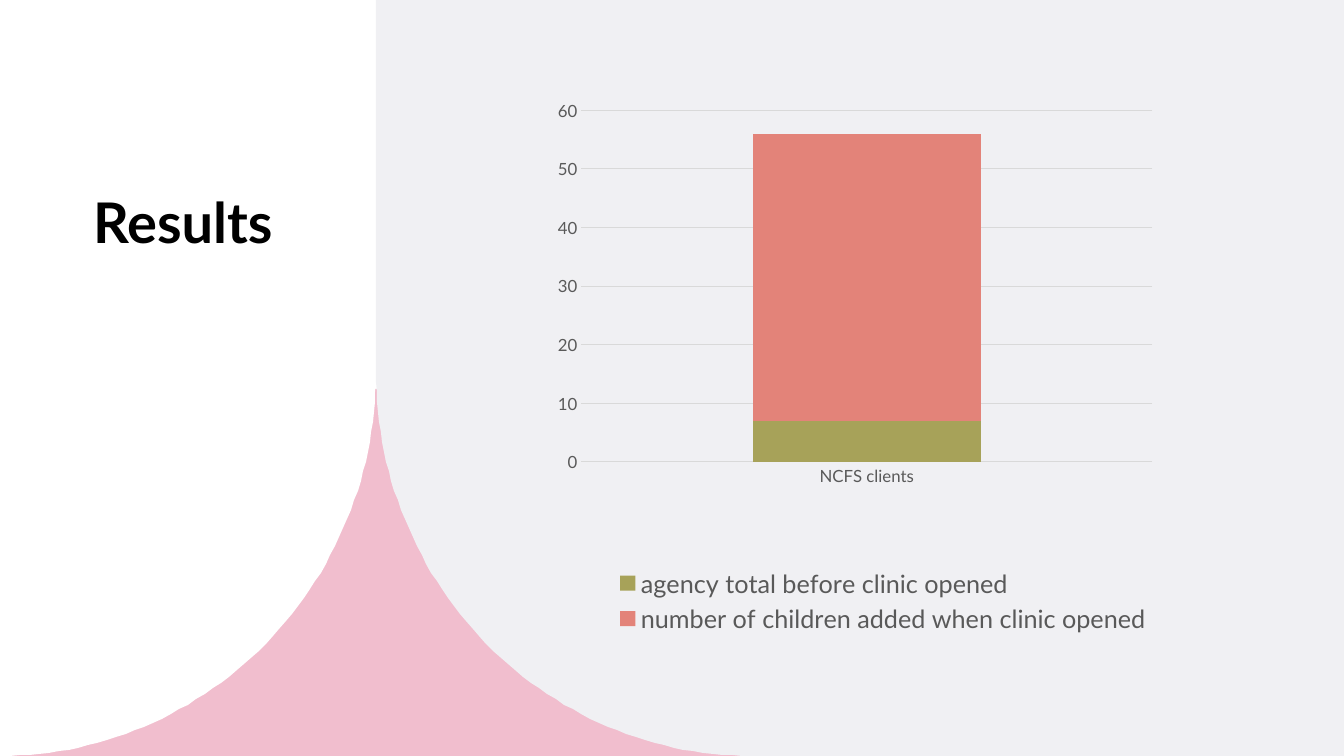
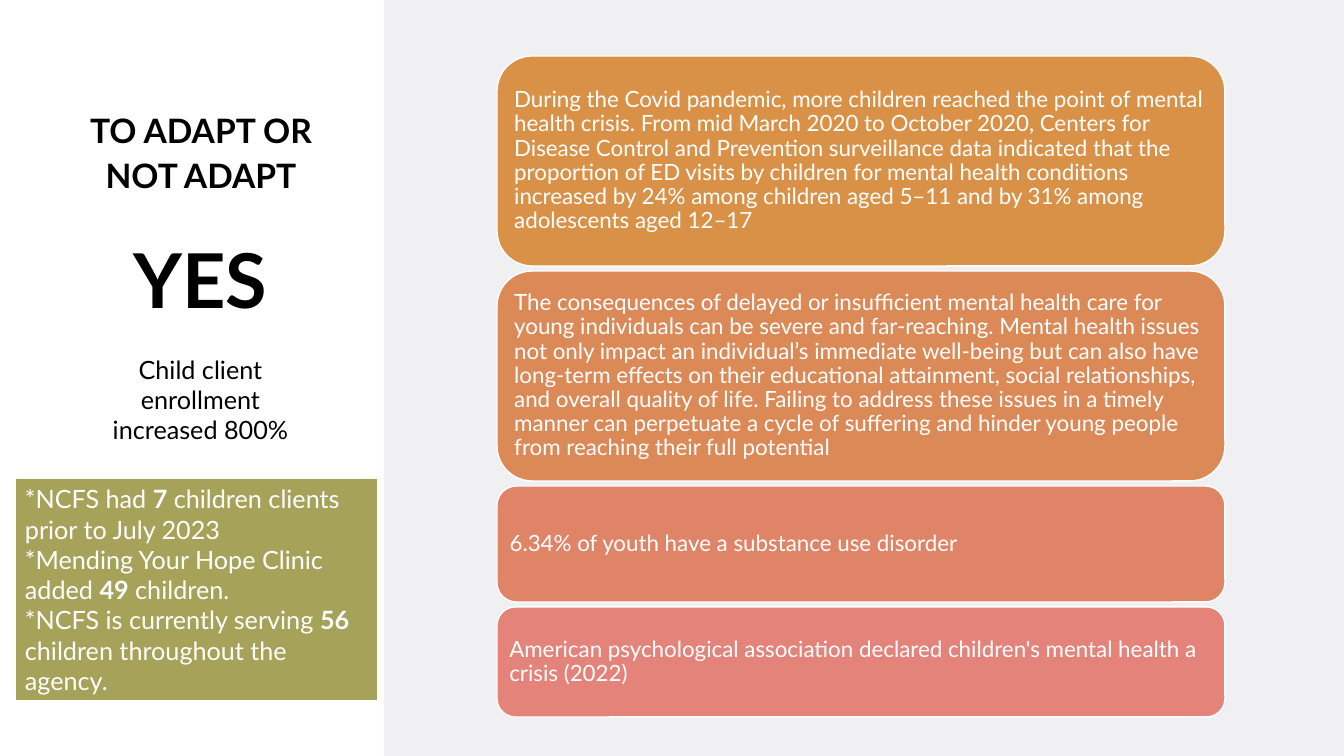
import math
from dataclasses import dataclass

from lxml import etree
from pptx import Presentation
from pptx import util as u
from pptx.chart.data import CategoryChartData
from pptx.dml.color import RGBColor
from pptx.enum import chart as charts, shapes, text
from pptx.oxml.ns import qn

EMU_PER_PX = 914400 / 100.8
SLIDE_WIDTH, SLIDE_HEIGHT = 1344, 756


@dataclass(frozen=True)
class Theme:
    font: str = "Lato"
    white: str = "FFFFFF"
    black: str = "000000"
    panel: str = "F0F0F3"
    pink: str = "F1BECE"
    olive: str = "A7A259"
    coral: str = "E38379"
    axis_text: str = "595959"
    grid: str = "D9D9D9"
    cards: tuple = ("D99147", "DC8958", "E08468", "E38379")
    results_size: int = 40
    question_size: int = 24
    answer_size: int = 54
    body_size: int = 18
    card_size: int = 16
    axis_size: int = 12


THEME = Theme()
LEFT, CENTER = text.PP_ALIGN.LEFT, text.PP_ALIGN.CENTER
TOP, MIDDLE, BOTTOM = (text.MSO_ANCHOR.TOP, text.MSO_ANCHOR.MIDDLE,
                       text.MSO_ANCHOR.BOTTOM)

# Content: boxes are (left, top, width, height) in px
RESULTS_TITLE = "Results"
RESULTS_TITLE_BOX = (83, 176, 265, 275)
CHART_BOX = (541, 86, 684, 553)
CHART_PLOT = {"x": 0.059, "y": 0.044, "w": 0.835, "h": 0.636}
CATEGORIES = ["NCFS clients"]
SERIES = [
    ("agency total before clinic opened", [7], THEME.olive),
    ("number of children added when clinic opened", [49], THEME.coral),
]
CURVE_X, CURVE_TOP = 376, 372
PINK_BAND_TOP = 389

ADAPT_TITLE = "TO ADAPT OR NOT ADAPT"
ADAPT_TITLE_BOX = (73, 54, 256, 146)
ADAPT_PANEL_LEFT = 384
ANSWER, ANSWER_BOX = "YES", (100, 228, 200, 102)
GROWTH = "Child client enrollment increased 800%"
GROWTH_BOX = (82, 349, 237, 102)
COUNTS_BOX = (15, 478, 363, 223)
COUNTS = [
    ("*NCFS had ", "7", " children clients prior to July 2023"),
    ("*Mending Your Hope Clinic added ", "49", " children."),
    ("*NCFS is currently serving ", "56", " children throughout the agency."),
]
CARD_LEFT, CARD_TOP, CARD_WIDTH, CARD_GAP, CARD_MARGIN = 497, 56, 728, 5, 7
CARDS = [
    (210, "During the Covid pandemic, more children reached the point of "
          "mental health crisis. From mid March 2020 to October 2020, Centers "
          "for Disease Control and Prevention surveillance data indicated that "
          "the proportion of ED visits by children for mental health "
          "conditions increased by 24% among children aged 5–11 and by 31% "
          "among adolescents aged 12–17"),
    (210, "The consequences of delayed or insufficient mental health care for "
          "young individuals can be severe and far-reaching. Mental health "
          "issues not only impact an individual’s immediate well-being but can "
          "also have long-term effects on their educational attainment, social "
          "relationships, and overall quality of life. Failing to address "
          "these issues in a timely manner can perpetuate a cycle of suffering "
          "and hinder young people from reaching their full potential"),
    (116, "6.34% of youth have a substance use disorder"),
    (110, "American psychological association declared children's mental "
          "health a crisis (2022)"),
]


# Shared helpers
def px(length):
    return u.Emu(round(length * EMU_PER_PX))


def place(box):
    return [px(length) for length in box]


def style_font(font, size, color, bold=False):
    font.name, font.size, font.bold = THEME.font, u.Pt(size), bold
    font.color.rgb = RGBColor.from_string(color)


def paint(shape, fill, line=None, line_width=1):
    shape.shadow.inherit = False
    shape.fill.solid()
    shape.fill.fore_color.rgb = RGBColor.from_string(fill)
    if line:
        shape.line.color.rgb = RGBColor.from_string(line)
        shape.line.width = u.Pt(line_width)
    else:
        shape.line.fill.background()


def write(shape, paragraphs, size, color, align=LEFT, anchor=TOP,
          spacing=1.0, margin=None):
    """Each paragraph is a list of (words, bold) runs."""
    frame = shape.text_frame
    frame.word_wrap = True
    frame.auto_size = text.MSO_AUTO_SIZE.NONE
    frame.vertical_anchor = anchor
    if margin is not None:
        frame.margin_left = frame.margin_right = px(margin)
        frame.margin_top = frame.margin_bottom = px(margin)
    for index, runs in enumerate(paragraphs):
        paragraph = frame.add_paragraph() if index else frame.paragraphs[0]
        paragraph.alignment, paragraph.line_spacing = align, spacing
        for words, bold in runs:
            run = paragraph.add_run()
            run.text = words
            style_font(run.font, size, color, bold)


def add_block(slide, kind, box, fill, line=None, line_width=1):
    shape = slide.shapes.add_shape(kind, *place(box))
    paint(shape, fill, line, line_width)
    return shape


def add_outline(slide, points, fill):
    builder = slide.shapes.build_freeform(*points[0], scale=EMU_PER_PX)
    builder.add_line_segments(points[1:], close=True)
    paint(builder.convert_to_shape(), fill)


def add_label(slide, box, words, size, bold=False):
    label = slide.shapes.add_textbox(*place(box))
    write(label, [[(words, bold)]], size, THEME.black, CENTER)


def add_titled_slide(presentation, title, box, size, align, anchor):
    slide = presentation.slides.add_slide(presentation.slide_layouts[5])
    shape = slide.shapes.title
    shape.left, shape.top, shape.width, shape.height = place(box)
    write(shape, [[(title, True)]], size, THEME.black, align, anchor, 1.1)
    return slide


def quarter_arc(center_x, direction, steps=60):
    """Points from the side of an ellipse down to its lowest point."""
    height = SLIDE_HEIGHT - CURVE_TOP
    angles = [math.pi / 2 * step / steps for step in range(steps + 1)]
    return [(center_x + direction * CURVE_X * math.cos(angle),
             CURVE_TOP + height * math.sin(angle)) for angle in angles]


# Results slide
def set_plot_layout(chart):
    plot_area = chart._chartSpace.chart.plotArea
    for old in plot_area.findall(qn("c:layout")):
        plot_area.remove(old)
    layout = etree.Element(qn("c:layout"))
    manual = etree.SubElement(layout, qn("c:manualLayout"))
    settings = {"layoutTarget": "inner", "xMode": "edge", "yMode": "edge"}
    for name, value in {**settings, **CHART_PLOT}.items():
        etree.SubElement(manual, qn(f"c:{name}")).set("val", str(value))
    plot_area.insert(0, layout)


def add_clients_chart(slide):
    data = CategoryChartData()
    data.categories = CATEGORIES
    for name, values, _ in SERIES:
        data.add_series(name, values)
    chart = slide.shapes.add_chart(charts.XL_CHART_TYPE.COLUMN_STACKED,
                                   *place(CHART_BOX), data).chart
    chart.has_title = False
    style_font(chart.font, THEME.axis_size, THEME.axis_text)
    chart.has_legend = True
    chart.legend.position = charts.XL_LEGEND_POSITION.BOTTOM
    chart.legend.include_in_layout = False
    style_font(chart.legend.font, THEME.body_size, THEME.axis_text)

    plot = chart.plots[0]
    plot.gap_width, plot.overlap, plot.vary_by_categories = 150, 100, False
    for series, (_, _, color) in zip(plot.series, SERIES):
        series.format.fill.solid()
        series.format.fill.fore_color.rgb = RGBColor.from_string(color)

    value_axis, category_axis = chart.value_axis, chart.category_axis
    for axis in (value_axis, category_axis):
        axis.major_tick_mark = axis.minor_tick_mark = charts.XL_TICK_MARK.NONE
        style_font(axis.tick_labels.font, THEME.axis_size, THEME.axis_text)
    value_axis.minimum_scale, value_axis.maximum_scale = 0, 60
    value_axis.major_unit = 10
    value_axis.format.line.fill.background()
    for line in (value_axis.major_gridlines.format.line,
                 category_axis.format.line):
        line.color.rgb = RGBColor.from_string(THEME.grid)
        line.width = u.Pt(0.75)
    set_plot_layout(chart)


def build_results(presentation):
    slide = add_titled_slide(presentation, RESULTS_TITLE, RESULTS_TITLE_BOX,
                             THEME.results_size, LEFT, TOP)
    # Pink band between two curved panels
    add_block(slide, shapes.MSO_SHAPE.RECTANGLE,
              (0, PINK_BAND_TOP, 2 * CURVE_X, SLIDE_HEIGHT - PINK_BAND_TOP),
              THEME.pink)
    add_outline(slide, [(0, 0), (CURVE_X, 0)] + quarter_arc(0, 1),
                THEME.white)
    add_outline(slide, [(SLIDE_WIDTH, SLIDE_HEIGHT), (SLIDE_WIDTH, 0),
                        (CURVE_X, 0)] + quarter_arc(2 * CURVE_X, -1),
                THEME.panel)
    # Bring the title in front of the white panel
    title = slide.shapes.title.element
    title.getparent().append(title)
    add_clients_chart(slide)


# Adapt slide
def build_adapt(presentation):
    slide = add_titled_slide(presentation, ADAPT_TITLE, ADAPT_TITLE_BOX,
                             THEME.question_size, CENTER, BOTTOM)
    add_block(slide, shapes.MSO_SHAPE.RECTANGLE,
              (ADAPT_PANEL_LEFT, 0, SLIDE_WIDTH - ADAPT_PANEL_LEFT,
               SLIDE_HEIGHT), THEME.panel)
    # Stacked cards
    top = CARD_TOP
    for (height, words), color in zip(CARDS, THEME.cards):
        card = add_block(slide, shapes.MSO_SHAPE.ROUNDED_RECTANGLE,
                         (CARD_LEFT, top, CARD_WIDTH, height), color,
                         THEME.white)
        write(card, [[(words, False)]], THEME.card_size, THEME.white,
              anchor=MIDDLE, spacing=0.9, margin=CARD_MARGIN)
        top += height + CARD_GAP
    # Answer and client counts
    add_label(slide, ANSWER_BOX, ANSWER, THEME.answer_size, True)
    add_label(slide, GROWTH_BOX, GROWTH, THEME.body_size)
    counts = add_block(slide, shapes.MSO_SHAPE.RECTANGLE, COUNTS_BOX,
                       THEME.olive, THEME.white, 1.5)
    write(counts, [[(before, False), (number, True), (after, False)]
                   for before, number, after in COUNTS],
          THEME.body_size, THEME.white, anchor=MIDDLE)


def main():
    presentation = Presentation()
    presentation.slide_width = px(SLIDE_WIDTH)
    presentation.slide_height = px(SLIDE_HEIGHT)
    build_results(presentation)
    build_adapt(presentation)
    presentation.save("out.pptx")


if __name__ == "__main__":
    main()
